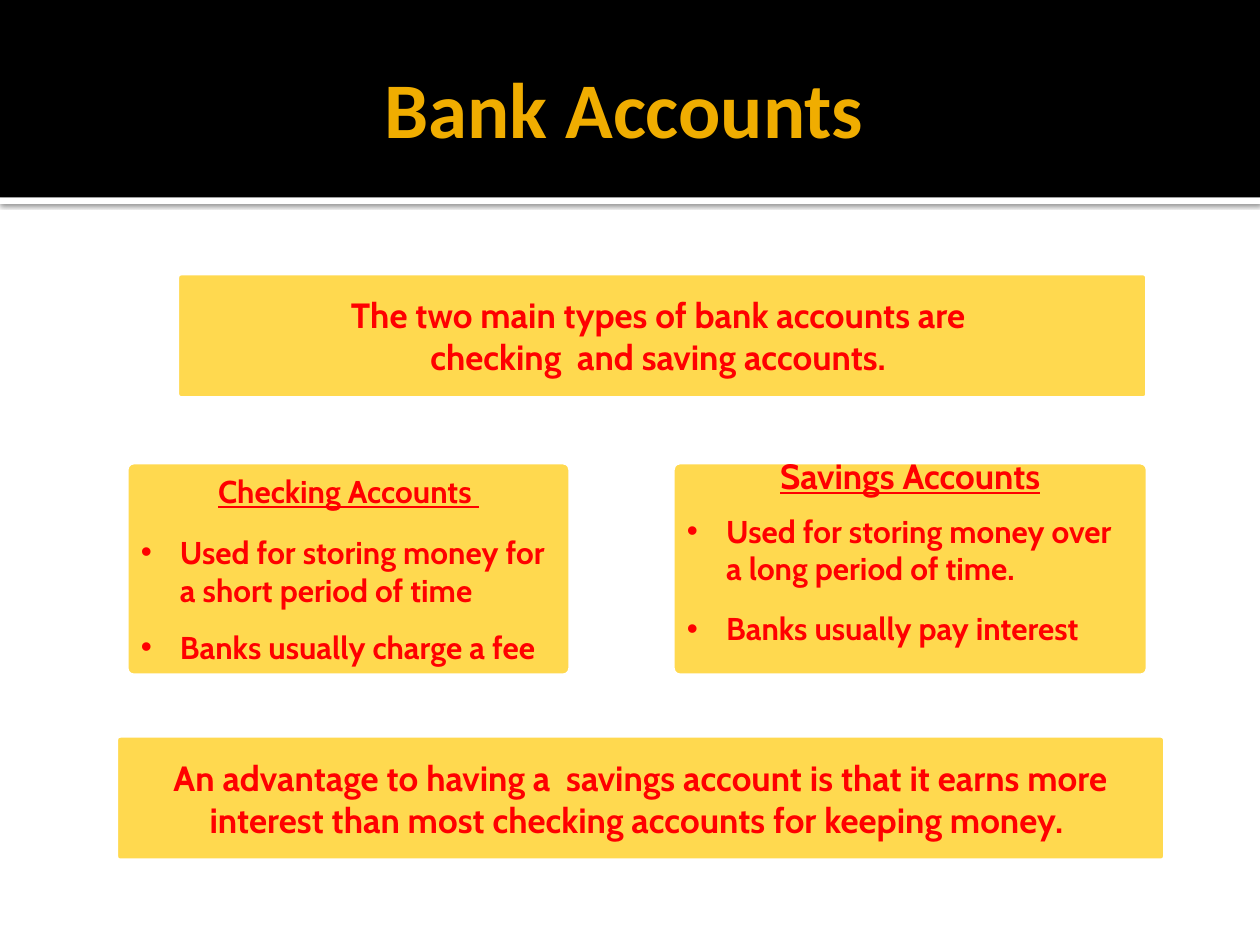
from dataclasses import dataclass
from lxml.etree import SubElement as Sub
from pptx import Presentation
from pptx.dml.color import RGBColor as Rgb
from pptx.enum.shapes import MSO_SHAPE as Kind
from pptx.enum.text import MSO_ANCHOR as Anchor, MSO_AUTO_SIZE as Fit, PP_ALIGN as Align
from pptx.oxml.ns import qn
from pptx.util import Cm, Pt


@dataclass(frozen=True)
class Theme:
    black: str = "000000"
    white: str = "FFFFFF"
    gold: str = "F0AD00"
    card: str = "FFD94F"
    red: str = "FF0000"
    head: str = "Calibri"
    body: str = "Cabin"
    title: float = 45
    large: float = 20
    small: float = 18
    edge: float = 3
    curve: float = 0.036


LOOK = Theme()


def place(shape, box):
    shape.left, shape.top, shape.width, shape.height = (Cm(v) for v in box)


def paint(shape, color):
    shape.fill.solid()
    shape.fill.fore_color.rgb = Rgb.from_string(color)


def trim(shape):
    paint(shape, LOOK.card)
    shape.line.color.rgb = Rgb.from_string(LOOK.white)
    shape.line.width = Pt(LOOK.edge)


def style(para, face, size, color, align=Align.CENTER, under=False):
    para.alignment = align
    para.space_before = Pt(0)
    for run in para.runs:
        font = run.font
        font.name, font.size, font.bold = face, Pt(size), True
        font.underline = under
        font.color.rgb = Rgb.from_string(color)


def mark(para, sign=None):
    props = para._p.get_or_add_pPr()
    step = Cm(0.79) if sign else 0
    props.set("marL", str(step))
    props.set("indent", str(-step))
    if sign:
        Sub(props, qn("a:buFont"), typeface="Arial")
        Sub(props, qn("a:buChar"), char=sign)
    else:
        Sub(props, qn("a:buNone"))


def shade(shape):
    effect = shape.element.spPr.find(qn("a:effectLst"))
    cast = Sub(effect, qn("a:outerShdw"), blurRad=str(Pt(2.5)),
               dist=str(Pt(0.8)), dir="5400000", rotWithShape="0")
    tint = Sub(cast, qn("a:srgbClr"), val=LOOK.black)
    Sub(tint, qn("a:alpha"), val="60000")


def header(slide, box, text):
    left, top, width, height = box
    title = slide.shapes.title
    rows = [(top + height, 0.13, LOOK.white), (top, height, LOOK.black)]
    for y, tall, color in rows:
        band = slide.shapes.add_shape(Kind.RECTANGLE, 0, 0, 0, 0)
        place(band, (left, y, width, tall))
        paint(band, color)
        band.line.fill.background()
        band.shadow.inherit = False
        if color == LOOK.white:
            shade(band)
        title.element.addprevious(band.element)
    place(title, (left + 1.27, top + 0.43, width - 2.54, height - 0.51))
    frame = title.text_frame
    frame.text = text
    frame.auto_size = Fit.NONE
    frame.vertical_anchor = Anchor.MIDDLE
    frame.margin_right = Cm(0.13)
    style(frame.paragraphs[0], LOOK.head, LOOK.title, LOOK.gold)


def banner(slide, box, text):
    shape = slide.shapes.add_shape(Kind.ROUNDED_RECTANGLE, 0, 0, 0, 0)
    place(shape, box)
    shape.adjustments[0] = LOOK.curve
    shape.shadow.inherit = False
    trim(shape)
    frame = shape.text_frame
    frame.text = text
    frame.word_wrap = True
    frame.vertical_anchor = Anchor.MIDDLE
    for para in frame.paragraphs:
        style(para, LOOK.body, LOOK.large, LOOK.red)


def panel(holder, box, name, size, items, gaps, foot):
    place(holder, box)
    geom = Sub(holder.element.spPr, qn("a:prstGeom"), prst="roundRect")
    guides = Sub(geom, qn("a:avLst"))
    Sub(guides, qn("a:gd"), name="adj", fmla=f"val {round(LOOK.curve * 100000)}")
    trim(holder)
    frame = holder.text_frame
    frame.text = "\n".join([name, *items])
    frame.auto_size = Fit.NONE
    frame.vertical_anchor = Anchor.MIDDLE
    frame.margin_bottom = Cm(foot)
    top, *rest = frame.paragraphs
    style(top, LOOK.body, size, LOOK.red, under=True)
    mark(top)
    for para, gap in zip(rest, gaps):
        style(para, LOOK.body, LOOK.small, LOOK.red, Align.LEFT)
        para.space_before = Pt(gap)
        mark(para, "•")


def main():
    deck = Presentation()
    deck.slide_width, deck.slide_height = Cm(25.4), Cm(19.05)
    slide = deck.slides.add_slide(deck.slide_layouts[3])
    header(slide, (0, 0, 25.4, 3.98), "Bank Accounts ")
    panel(slide.placeholders[1], (2.54, 9.31, 8.97, 4.32),
          "Checking Accounts ", LOOK.small,
          ["Used for storing money for a short period of time",
           "Banks usually charge a fee"], (13.2, 11), 0.13)
    panel(slide.placeholders[2], (13.55, 9.31, 9.6, 4.32),
          "Savings Accounts", LOOK.large,
          ["Used for storing money over a long period of time.",
           "Banks usually pay interest"], (8.5, 12.7), 0.85)
    banner(slide, (3.56, 5.5, 19.58, 2.54),
           "The two main types of bank accounts are \n"
           "checking  and saving accounts. ")
    banner(slide, (2.33, 14.82, 21.17, 2.54),
           "An advantage to having a  savings account is that it earns more "
           "interest than most checking accounts for keeping money. ")
    deck.save("out.pptx")


if __name__ == "__main__":
    main()
